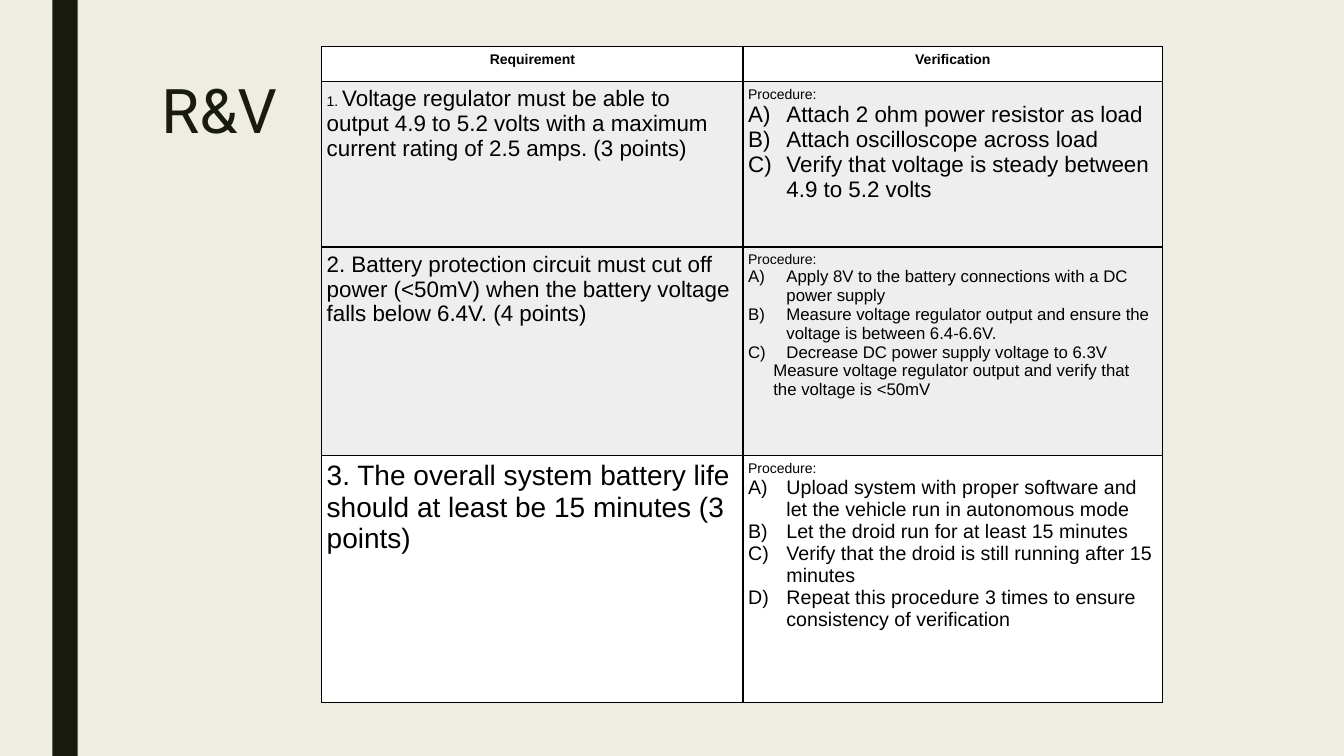
"""Build the R&V slide: a requirement and verification table beside its title."""
from dataclasses import dataclass

from lxml import etree
from pptx import Presentation
from pptx.dml.color import RGBColor
from pptx.enum.shapes import MSO_SHAPE
from pptx.enum.text import MSO_ANCHOR, MSO_AUTO_SIZE, PP_ALIGN
from pptx.oxml.ns import qn
from pptx.util import Emu, Pt

RECTANGLE = MSO_SHAPE.RECTANGLE
TOP = MSO_ANCHOR.TOP
LEFT, CENTER = PP_ALIGN.LEFT, PP_ALIGN.CENTER
NO_AUTOFIT = MSO_AUTO_SIZE.NONE

EMU_PER_PX = 9144
COLORS = {"paper": "EFEDE3", "ink": "191B0E", "text": "000000",
          "white": "FFFFFF", "gray": "EEEEEE"}
TITLE_ONLY = 5
COLUMN_WIDTHS = (418, 416)
CELL_MARGIN = 5
LIST_INDENT = 38
NOTE_INDENT = 25
SMALL = 10


@dataclass(frozen=True)
class Span:
    """A piece of text with its size in points."""
    text: str
    size: int


@dataclass(frozen=True)
class Requirement:
    """A table row: requirement, verification steps and closing note."""
    height: int
    fill: str
    spans: tuple[Span, ...]
    steps: tuple[str, ...]
    step_size: int
    note: str = ""


HEADINGS = ("Requirement", "Verification")
HEADING_HEIGHT = 35
REQUIREMENTS = (
    Requirement(
        164, "gray",
        (Span("1. ", SMALL),
         Span("Voltage regulator must be able to output 4.9 to 5.2 volts with a "
              "maximum current rating of 2.5 amps. (3 points)", 16)),
        ("Attach 2 ohm power resistor as load",
         "Attach oscilloscope across load",
         "Verify that voltage is steady between 4.9 to 5.2 volts"), 16),
    Requirement(
        207, "gray",
        (Span("2. Battery protection circuit must cut off power (<50mV) when the "
              "battery voltage falls below 6.4V. (4 points)", 16),),
        ("Apply 8V to the battery connections with a DC power supply",
         "Measure voltage regulator output and ensure the voltage is between 6.4-6.6V.",
         "Decrease DC power supply voltage to 6.3V"), 12,
        "Measure voltage regulator output and verify that the voltage is <50mV"),
    Requirement(
        245, "white",
        (Span("3. The overall system battery life should at least be 15 minutes "
              "(3 points)", 20),),
        ("Upload system with proper software and let the vehicle run in autonomous mode",
         "Let the droid run for at least 15 minutes",
         "Verify that the droid is still running after 15 minutes",
         "Repeat this procedure 3 times to ensure consistency of verification"), 14),
)


def px(length: int) -> Emu:
    """Turn pixels into EMU."""
    return Emu(length * EMU_PER_PX)


def rgb(name: str) -> RGBColor:
    """Look up a named colour."""
    return RGBColor.from_string(COLORS[name])


def style_font(font, size: int, name: str = "Arial", color: str = "text",
               bold: bool = False) -> None:
    """Set the size, typeface, colour and weight of a font."""
    font.size, font.name, font.bold = Pt(size), name, bold
    font.color.rgb = rgb(color)


def indent(para, margin: int, hanging: int = 0, lettered: bool = False) -> None:
    """Indent a paragraph and optionally letter it A), B), C)."""
    properties = para._p.get_or_add_pPr()
    properties.set("marL", str(px(margin)))
    properties.set("indent", str(px(-hanging)))
    if lettered:
        numbering = etree.Element(qn("a:buAutoNum"), type="alphaUcParenR")
        properties.insert(0, numbering)


def draw_borders(cell) -> None:
    """Draw a one-point line on each side of a cell."""
    properties = cell._tc.get_or_add_tcPr()
    for position, side in enumerate(("lnL", "lnR", "lnT", "lnB")):
        line = etree.Element(qn(f"a:{side}"), w=str(Pt(1)))
        fill = etree.SubElement(line, qn("a:solidFill"))
        etree.SubElement(fill, qn("a:srgbClr"), val=COLORS["text"])
        properties.insert(position, line)


def prepare_cell(cell, fill: str) -> None:
    """Set the fill, margins, anchor and borders of a cell."""
    cell.fill.solid()
    cell.fill.fore_color.rgb = rgb(fill)
    cell.margin_left = cell.margin_right = px(CELL_MARGIN)
    cell.margin_top = cell.margin_bottom = px(CELL_MARGIN)
    cell.vertical_anchor = TOP
    draw_borders(cell)


def write_para(para, text: str, size: int, bold: bool = False):
    """Write one paragraph in a single font and return it."""
    para.text = text
    style_font(para.font, size, bold=bold)
    return para


def write_requirement(cell, requirement: Requirement) -> None:
    """Write the requirement statement."""
    para = cell.text_frame.paragraphs[0]
    if len(requirement.spans) == 1:
        write_para(para, requirement.spans[0].text, requirement.spans[0].size)
        return
    for span in requirement.spans:
        run = para.add_run()
        run.text = span.text
        style_font(run.font, span.size)


def write_verification(cell, requirement: Requirement) -> None:
    """Write the lettered procedure and its closing note."""
    frame = cell.text_frame
    write_para(frame.paragraphs[0], "Procedure:", SMALL)
    for step in requirement.steps:
        para = write_para(frame.add_paragraph(), step, requirement.step_size)
        indent(para, LIST_INDENT, LIST_INDENT, lettered=True)
    if requirement.note:
        para = write_para(frame.add_paragraph(), requirement.note, requirement.step_size)
        indent(para, NOTE_INDENT)


def add_stripe(page) -> None:
    """Add the dark stripe at the left."""
    stripe = page.shapes.add_shape(RECTANGLE, px(52), px(0), px(25), px(750))
    stripe.shadow.inherit = False
    stripe.fill.solid()
    stripe.fill.fore_color.rgb = rgb("ink")
    stripe.line.fill.background()


def write_title(page) -> None:
    """Place and format the title."""
    title = page.shapes.title
    title.left, title.top, title.width, title.height = px(150), px(75), px(1050), px(162)
    frame = title.text_frame
    frame.vertical_anchor, frame.auto_size, frame.word_wrap = TOP, NO_AUTOFIT, True
    para = frame.paragraphs[0]
    para.text, para.alignment, para.line_spacing = "R&V", LEFT, 0.89
    style_font(para.font, 44, "Roboto", "ink")


def add_requirements_table(page) -> None:
    """Add the table of requirements and verifications."""
    heights = [HEADING_HEIGHT] + [row.height for row in REQUIREMENTS]
    table = page.shapes.add_table(len(heights), len(COLUMN_WIDTHS), px(319), px(46),
                                  px(sum(COLUMN_WIDTHS)), px(sum(heights))).table
    table.first_row = table.horz_banding = False
    for column, width in zip(table.columns, COLUMN_WIDTHS):
        column.width = px(width)
    for row, height in zip(table.rows, heights):
        row.height = px(height)
    for index, heading in enumerate(HEADINGS):
        cell = table.cell(0, index)
        prepare_cell(cell, "white")
        write_para(cell.text_frame.paragraphs[0], heading, SMALL, True).alignment = CENTER
    for index, requirement in enumerate(REQUIREMENTS, start=1):
        for column, write in enumerate((write_requirement, write_verification)):
            cell = table.cell(index, column)
            prepare_cell(cell, requirement.fill)
            write(cell, requirement)


def main() -> None:
    """Build and save the deck."""
    deck = Presentation()
    deck.slide_width, deck.slide_height = px(1333), px(750)
    page = deck.slides.add_slide(deck.slide_layouts[TITLE_ONLY])
    page.background.fill.solid()
    page.background.fill.fore_color.rgb = rgb("paper")
    add_stripe(page)
    write_title(page)
    add_requirements_table(page)
    deck.save("out.pptx")


if __name__ == "__main__":
    main()
